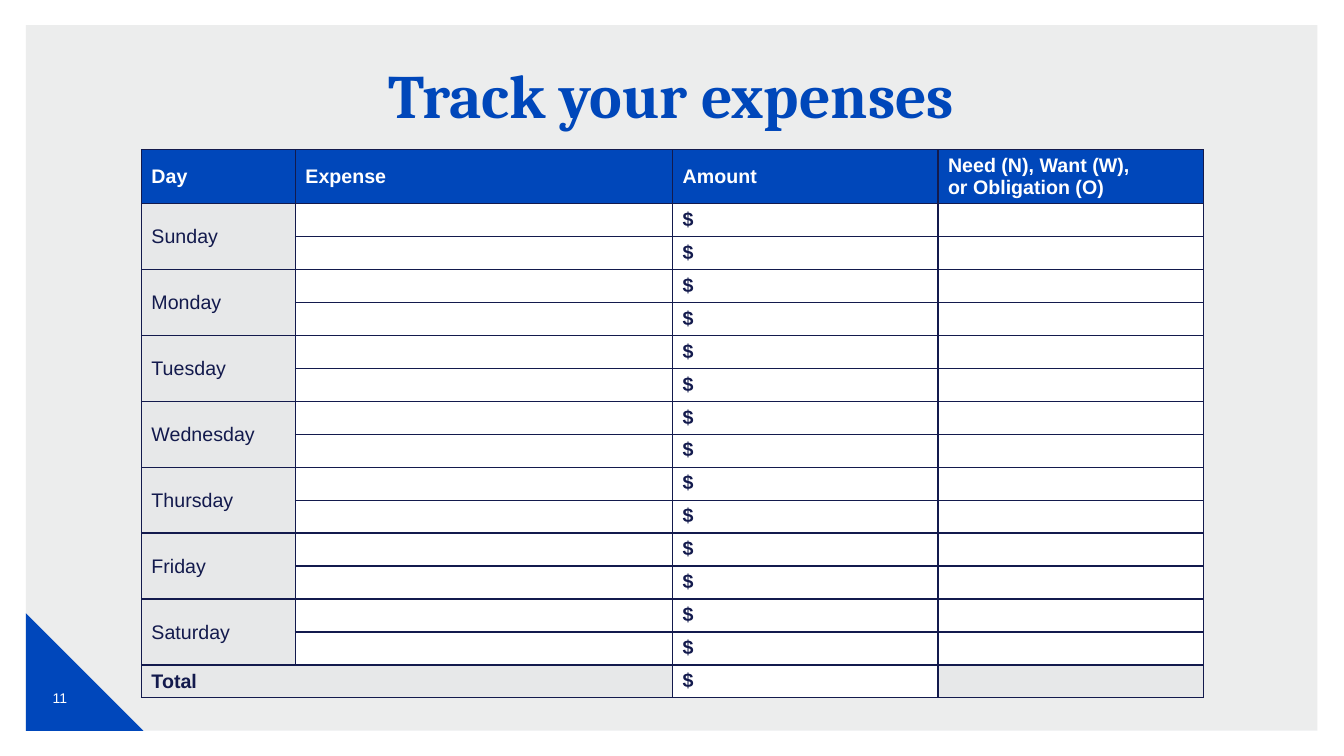
from dataclasses import dataclass

from lxml import etree
from pptx import Presentation
from pptx.dml.color import RGBColor
from pptx.enum.shapes import MSO_SHAPE
from pptx.enum.text import MSO_ANCHOR, MSO_AUTO_SIZE, PP_ALIGN
from pptx.oxml.ns import qn
from pptx.util import Emu, Pt

RECTANGLE = MSO_SHAPE.RECTANGLE
RIGHT_TRIANGLE = MSO_SHAPE.RIGHT_TRIANGLE
TOP, MIDDLE = MSO_ANCHOR.TOP, MSO_ANCHOR.MIDDLE
LEFT, CENTER = PP_ALIGN.LEFT, PP_ALIGN.CENTER

EMU_PER_PX = 6350
BLUE, NAVY, WHITE, GREY = "0047BA", "131A4D", "FFFFFF", "E7E8E9"
COLUMN_WIDTHS = (220, 539, 379, 379)
HEADINGS = ("Day", "Expense", "Amount", "Need (N), Want (W), \nor Obligation (O)")
DAYS = ("Sunday", "Monday", "Tuesday", "Wednesday", "Thursday", "Friday", "Saturday")
HEADER_HEIGHT, ROW_HEIGHT = 77, 46
ROWS_PER_DAY = 2


@dataclass
class Backdrop:
    preset: MSO_SHAPE
    box: tuple[int, int, int, int]
    fill: str
    opacity: int = 100


@dataclass
class Entry:
    text: str = ""
    fill: str = WHITE
    color: str = NAVY
    bold: bool = True
    anchor: MSO_ANCHOR = TOP
    top_border: int = 1


BACKDROPS = (
    Backdrop(RECTANGLE, (37, 36, 1845, 1008), "D0D3D4", 40),
    Backdrop(RIGHT_TRIANGLE, (37, 876, 168, 168), "0047BB"),
)


def px(length: int) -> Emu:
    return Emu(length * EMU_PER_PX)


def rgb(value: str) -> RGBColor:
    return RGBColor.from_string(value)


def write_text(frame, text: str, *, size: int, color: str, font: str = "Arial",
               bold: bool = False, align: PP_ALIGN = LEFT,
               line_spacing: float = 1.0) -> None:
    paragraph = frame.paragraphs[0]
    paragraph.text = text
    paragraph.alignment = align
    paragraph.line_spacing = line_spacing
    for run in paragraph.runs:
        run.font.size = Pt(size)
        run.font.name = font
        run.font.bold = bold
        run.font.color.rgb = rgb(color)
    if not text:
        etree.SubElement(paragraph._p, qn("a:endParaRPr"), sz=str(size * 100))


def draw_backdrop(slide, backdrop: Backdrop) -> None:
    shape = slide.shapes.add_shape(backdrop.preset, *map(px, backdrop.box))
    shape.shadow.inherit = False
    shape.line.fill.background()
    shape.fill.solid()
    shape.fill.fore_color.rgb = rgb(backdrop.fill)
    if backdrop.opacity < 100:
        tint = shape.fill._xPr.find(qn("a:solidFill"))[0]
        etree.SubElement(tint, qn("a:alpha"), val=str(backdrop.opacity * 1000))


def draw_title(slide) -> None:
    title = slide.shapes.title
    title._element.getparent().append(title._element)
    title.left, title.top, title.width, title.height = map(px, (235, 86, 1449, 96))
    frame = title.text_frame
    frame.margin_left = frame.margin_right = 0
    frame.margin_top = frame.margin_bottom = px(7)
    frame.vertical_anchor = TOP
    frame.word_wrap = True
    frame.auto_size = MSO_AUTO_SIZE.NONE
    write_text(frame, "Track your expenses", size=44, color=BLUE, font="Cambria",
               bold=True, align=CENTER, line_spacing=0.9)


def draw_page_number(slide) -> None:
    frame = slide.shapes.add_textbox(*map(px, (46, 955, 79, 84))).text_frame
    frame.word_wrap = True
    frame.vertical_anchor = MIDDLE
    write_text(frame, "11", size=10, color=WHITE, align=CENTER)


def fill_cell(cell, entry: Entry) -> None:
    properties = cell._tc.get_or_add_tcPr()
    for side in ("L", "R", "T", "B"):
        width = entry.top_border if side == "T" else 1
        border = etree.SubElement(properties, qn(f"a:ln{side}"), w=str(Pt(width)))
        ink = etree.SubElement(border, qn("a:solidFill"))
        etree.SubElement(ink, qn("a:srgbClr"), val=NAVY)
    cell.fill.solid()
    cell.fill.fore_color.rgb = rgb(entry.fill)
    cell.margin_top, cell.margin_bottom = px(7), px(6)
    cell.vertical_anchor = entry.anchor
    write_text(cell.text_frame, entry.text, size=14, color=entry.color, bold=entry.bold)


def expense_rows() -> list[list[Entry]]:
    rows = [[Entry(heading, BLUE, WHITE, anchor=MIDDLE) for heading in HEADINGS]]
    for day in DAYS:
        for line in range(ROWS_PER_DAY):
            label = day if line == 0 else ""
            rows.append([Entry(label, GREY, bold=False, anchor=MIDDLE),
                         Entry(), Entry("$"), Entry()])
    rows.append([Entry("Total", GREY, anchor=MIDDLE, top_border=2),
                 Entry(fill=GREY, top_border=2),
                 Entry("$", top_border=2),
                 Entry(fill=GREY, top_border=2)])
    return rows


def draw_expense_table(slide) -> None:
    rows = expense_rows()
    height = HEADER_HEIGHT + ROW_HEIGHT * (len(rows) - 1)
    table = slide.shapes.add_table(
        len(rows), len(COLUMN_WIDTHS), px(202), px(214), px(sum(COLUMN_WIDTHS)), px(height)
    ).table
    table.horz_banding = False
    for column, width in zip(table.columns, COLUMN_WIDTHS):
        column.width = px(width)
    for index, entries in enumerate(rows):
        table.rows[index].height = px(ROW_HEIGHT if index else HEADER_HEIGHT)
        for column, entry in enumerate(entries):
            fill_cell(table.cell(index, column), entry)
    total_row = len(rows) - 1
    for first in range(1, total_row, ROWS_PER_DAY):
        table.cell(first, 0).merge(table.cell(first + ROWS_PER_DAY - 1, 0))
    table.cell(total_row, 0).merge(table.cell(total_row, 1))


def main() -> None:
    presentation = Presentation()
    presentation.slide_width, presentation.slide_height = px(1920), px(1080)
    slide = presentation.slides.add_slide(presentation.slide_layouts[5])
    for backdrop in BACKDROPS:
        draw_backdrop(slide, backdrop)
    draw_page_number(slide)
    draw_title(slide)
    draw_expense_table(slide)
    presentation.save("out.pptx")


if __name__ == "__main__":
    main()
